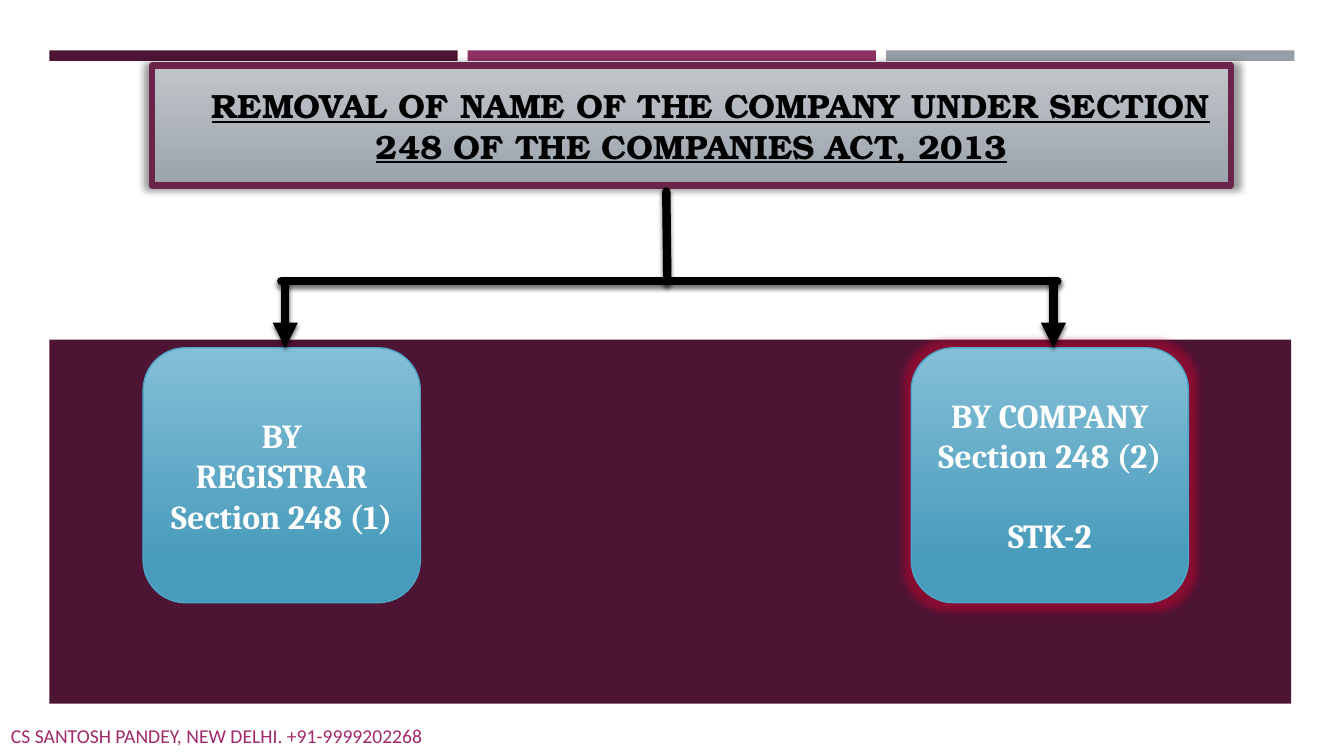
from dataclasses import dataclass

from lxml import etree
from pptx import Presentation
from pptx import util as u
from pptx.dml.color import RGBColor
from pptx.enum import shapes, text
from pptx.oxml import ns


@dataclass(frozen=True)
class Theme:
    plum: str = "4D1434"
    magenta: str = "903163"
    grey: str = "969FA7"
    frame: str = "6C254A"
    black: str = "000000"
    white: str = "FFFFFF"
    footer: str = "9F296B"
    glow: str = "E0002D"
    box_line: str = "4FA5C7"
    title_fill: tuple = (("C0C5C9", 0), ("9BA3AB", 1))
    box_fill: tuple = (("84BFD7", 0), ("489BBB", 0.84))
    heading_size: int = 24
    footer_size: int = 14


def rgb(value):
    return RGBColor.from_string(value)


def child(parent, tag, **attrs):
    return etree.SubElement(parent, ns.qn(f"a:{tag}"),
                            {k: str(v) for k, v in attrs.items()})


class Deck:
    """Holds the theme and the current slide; the grid has 10 cells per inch."""

    def __init__(self, theme, columns=133.33, rows=75):
        self.theme = theme
        self.prs = Presentation()
        self.prs.slide_width, self.prs.slide_height = u.Inches(13.33), u.Inches(7.5)
        self.col = self.prs.slide_width / columns
        self.row = self.prs.slide_height / rows
        self.s = self.prs.slides.add_slide(self.prs.slide_layouts[6])

    def place(self, x, y, *rest):
        steps = (self.col, self.row, self.col, self.row)
        return [round(v * step) for v, step in zip((x, y, *rest), steps)]

    def shape(self, kind, at, fill, line=None, width=1):
        sp = self.s.shapes.add_shape(kind, *self.place(*at))
        sp.shadow.inherit = False
        if isinstance(fill, str):
            sp.fill.solid()
            sp.fill.fore_color.rgb = rgb(fill)
        else:
            sp.fill.gradient()
            sp.fill.gradient_angle = 270
            for stop, (color, position) in zip(sp.fill.gradient_stops, fill):
                stop.color.rgb, stop.position = rgb(color), position
        if line:
            sp.line.color.rgb, sp.line.width = rgb(line), u.Pt(width)
        else:
            sp.line.fill.background()
        return sp

    def bar(self, at, color):
        return self.shape(shapes.MSO_SHAPE.RECTANGLE, at, color)

    def effect(self, sp, tag, color, alpha, **attrs):
        spPr = sp._element.spPr
        effects = spPr.find(ns.qn("a:effectLst"))
        if effects is None:
            effects = child(spPr, "effectLst")
        tint = child(child(effects, tag, **attrs), "srgbClr", val=color)
        child(tint, "alpha", val=alpha * 1000)

    def add_lines(self, sp, lines, align=text.PP_ALIGN.CENTER, **font):
        tf = sp.text_frame
        tf.word_wrap = True
        tf.vertical_anchor = text.MSO_ANCHOR.MIDDLE
        style = {"bold": True, "size": u.Pt(self.theme.heading_size), **font}
        color = style.pop("color")
        for i, line in enumerate(lines):
            p = tf.paragraphs[0] if i == 0 else tf.add_paragraph()
            p.alignment = align
            r = p.add_run()
            r.text = line
            r.font.color.rgb = rgb(color)
            for name, value in style.items():
                setattr(r.font, name, value)
        return tf

    def box(self, at, lines):
        t = self.theme
        sp = self.shape(shapes.MSO_SHAPE.ROUNDED_RECTANGLE, at, t.box_fill, t.box_line)
        self.add_lines(sp, lines, name="Cambria", color=t.white)
        return sp

    def link(self, start, end, arrow=False):
        sp = self.s.shapes.add_connector(shapes.MSO_CONNECTOR.STRAIGHT,
                                         *self.place(*start, *end))
        sp.line.color.rgb, sp.line.width = rgb(self.theme.black), u.Pt(6)
        ln = sp.line._get_or_add_ln()
        ln.set("cap", "rnd")
        child(ln, "round")
        if arrow:
            child(ln, "tailEnd", type="triangle")
        self.effect(sp, "outerShdw", self.theme.black, 55,
                    blurRad=u.Pt(3), dist=u.Pt(2), dir=5400000)

    def label(self, at, line, **font):
        sp = self.s.shapes.add_textbox(*self.place(*at))
        self.add_lines(sp, [line], text.PP_ALIGN.LEFT, **font)


def main():
    t = Theme()
    d = Deck(t)

    # Top bars and backdrop
    for i, color in enumerate((t.plum, t.magenta, t.grey)):
        d.bar((4.9 + 41.5 * i, 5, 40.5, 1.05), color)
    d.bar((4.9, 33.7, 123.2, 36.1), t.plum)

    # Title
    title = d.shape(shapes.MSO_SHAPE.RECTANGLE, (15.1, 6.5, 107, 11.9),
                    t.title_fill, t.frame, 4.5)
    d.effect(title, "outerShdw", t.black, 40, blurRad=u.Pt(5), sx=101000, sy=101000,
             algn="ctr")
    tf = d.add_lines(title, ["REMOVAL OF NAME OF THE COMPANY UNDER SECTION 248 "
                             "OF THE COMPANIES ACT, 2013"],
                     name="TeX Gyre Bonum", color=t.black, underline=True)
    tf.paragraphs[0]._p.get_or_add_pPr().set("indent", str(u.Inches(0.38)))

    # The two routes
    top, width, height = 34.5, 27.5, 25.3
    d.box((14.2, top, width, height), ["BY", "REGISTRAR", "Section 248 (1)"])
    company = d.box((90.4, top, width, height),
                    ["BY COMPANY Section 248 (2)", "STK-2"])
    company.text_frame.paragraphs[1].space_before = u.Pt(28.5)
    d.effect(company, "glow", t.glow, 40, rad=u.Pt(11))

    # Branching arrows
    fork, left, right = 27.9, 28.3, 104.5
    d.link((66.1, 19), (66.2, fork))
    d.link((left - 0.4, fork), (right + 0.4, fork))
    for x in (left, right):
        d.link((x, fork), (x, top), arrow=True)

    # Footer
    d.label((0.1, 71, 75.6, 4), "CS SANTOSH PANDEY, NEW DELHI. +91-9999202268",
            name="Calibri", color=t.footer, size=u.Pt(t.footer_size), bold=False)

    d.prs.save("out.pptx")


if __name__ == "__main__":
    main()
